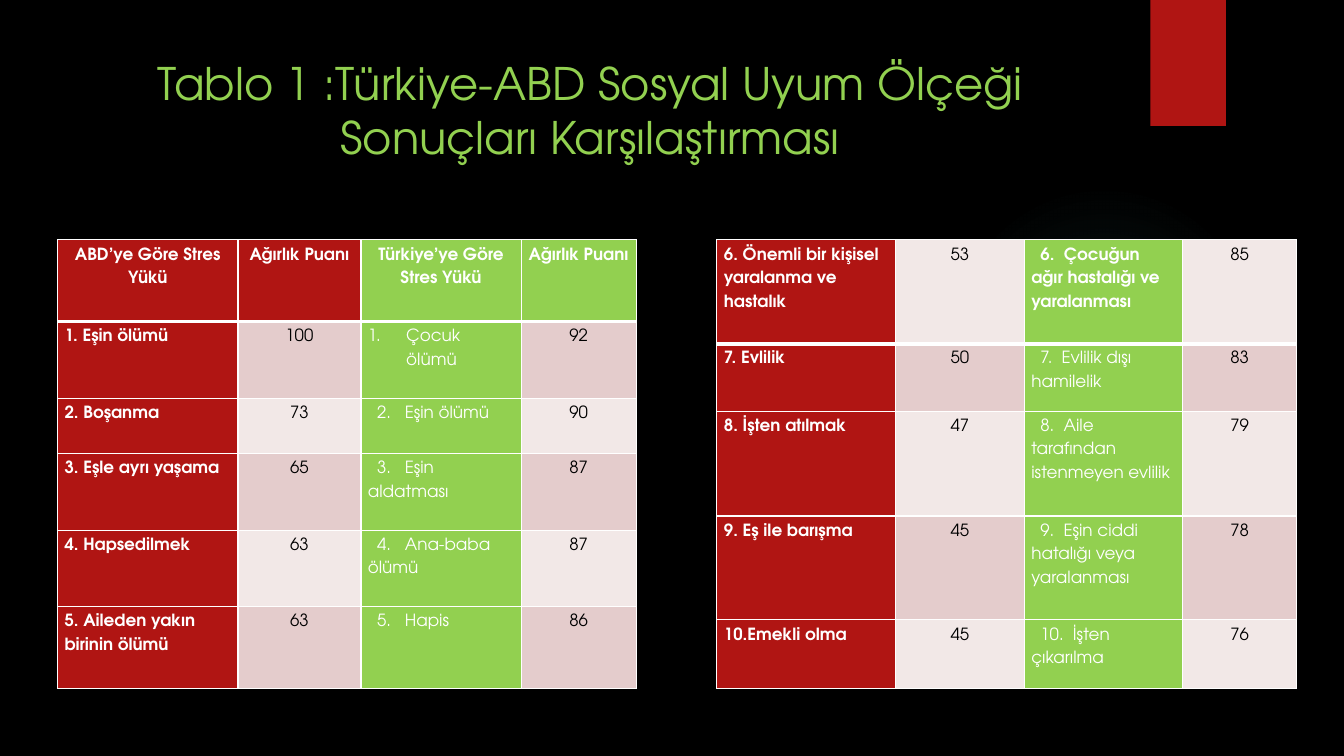
from dataclasses import dataclass

from lxml.etree import SubElement
from pptx import Presentation
from pptx.dml.color import RGBColor
from pptx.enum.shapes import MSO_SHAPE
from pptx.enum.text import MSO_ANCHOR, PP_ALIGN
from pptx.oxml import parse_xml
from pptx.oxml.ns import nsdecls, qn
from pptx.slide import Slide
from pptx.table import _Cell
from pptx.text.text import _Paragraph, _Run
from pptx.util import Pt

EMU_PER_PX = 9144  # 100 px to the inch
FONT = "TeX Gyre Adventor"
BLACK, WHITE, RED, GREEN, TEAL = "000000", "FFFFFF", "B01513", "92D050", "50B9C1"
BANDS = ("F2E8E7", "E4CCCC")


@dataclass(frozen=True)
class ScoreRow:
    height: int
    usa_event: str
    usa_score: str
    turkey_event: str
    turkey_score: str


@dataclass(frozen=True)
class ScoreTable:
    left: int
    widths: tuple[int, ...]
    number_gap: int  # extra width after a number, in hundredths of a point
    has_header: bool
    rows: tuple[ScoreRow, ...]


TABLES = (
    ScoreTable(57, (179, 122, 159, 114), 660, True, (
        ScoreRow(81, "ABD’ye Göre Stres Yükü", "Ağırlık Puanı",
                 "Türkiye’ye Göre Stres Yükü", "Ağırlık Puanı"),
        ScoreRow(76, "1. Eşin ölümü", "100", "Çocuk ölümü", "92"),
        ScoreRow(55, "2. Boşanma", "73", "2. Eşin ölümü", "90"),
        ScoreRow(76, "3. Eşle ayrı yaşama", "65", "3. Eşin aldatması", "87"),
        ScoreRow(76, "4. Hapsedilmek", "63", "4. Ana-baba ölümü", "87"),
        ScoreRow(81, "5. Aileden yakın birinin ölümü", "63", "5. Hapis", "86"),
    )),
    ScoreTable(711, (177, 128, 157, 113), 330, False, (
        ScoreRow(103, "6. Önemli bir kişisel yaralanma ve hastalık", "53",
                 "6. Çocuğun ağır hastalığı ve yaralanması", "85"),
        ScoreRow(67, "7. Evlilik", "50", "7. Evlilik dışı hamilelik", "83"),
        ScoreRow(104, "8. İşten atılmak", "47",
                 "8. Aile tarafından istenmeyen evlilik", "79"),
        ScoreRow(103, "9. Eş ile barışma", "45",
                 "9. Eşin ciddi hatalığı veya yaralanması", "78"),
        ScoreRow(68, "10.Emekli olma", "45", "10. İşten çıkarılma", "76"),
    )),
)


def px(length: int) -> int:
    return length * EMU_PER_PX


def rgb(color: str) -> RGBColor:
    return RGBColor.from_string(color)


def add_span(para: _Paragraph, text: str, size: int, color: str, bold: bool = False) -> _Run:
    span = para.add_run()
    span.text = text
    span.font.name = FONT
    span.font.size = Pt(size)
    span.font.bold = bold
    span.font.color.rgb = rgb(color)
    return span


def add_glow(page: Slide) -> None:
    """Faint teal disc that fades out towards its rim."""
    glow = page.shapes.add_shape(MSO_SHAPE.OVAL, px(941), px(183), px(308), px(308))
    glow.shadow.inherit = False
    glow.line.fill.background()
    stops = "".join(
        f'<a:gs pos="{place * 1000}"><a:srgbClr val="{TEAL}">'
        f'<a:alpha val="{alpha * 1000}"/></a:srgbClr></a:gs>'
        for place, alpha in ((0, 7), (36, 6), (69, 0))
    )
    gradient = parse_xml(
        f'<a:gradFill {nsdecls("a")}><a:gsLst>{stops}</a:gsLst><a:path path="circle">'
        '<a:fillToRect l="50000" t="50000" r="50000" b="50000"/></a:path></a:gradFill>'
    )
    glow.element.spPr.find(qn("a:prstGeom")).addnext(gradient)


def add_ribbon(page: Slide) -> None:
    ribbon = page.shapes.add_shape(MSO_SHAPE.RECTANGLE, px(1141), 0, px(75), px(125))
    ribbon.shadow.inherit = False
    ribbon.fill.solid()
    ribbon.fill.fore_color.rgb = rgb(RED)
    ribbon.line.fill.background()


def set_title(page: Slide, text: str) -> None:
    title = page.shapes.title
    title.left, title.top, title.width, title.height = px(71), px(50), px(1029), px(153)
    title.text_frame.word_wrap = True
    title.text_frame.vertical_anchor = MSO_ANCHOR.TOP
    para = title.text_frame.paragraphs[0]
    para.alignment = PP_ALIGN.CENTER
    add_span(para, text, 32, GREEN)


def set_borders(cell: _Cell, top: int, bottom: int) -> None:
    properties = cell._tc.get_or_add_tcPr()
    edges = (("L", 1), ("R", 1), ("T", top), ("B", bottom))
    for index, (side, weight) in enumerate(edges):
        properties.insert(index, parse_xml(
            f'<a:ln{side} {nsdecls("a")} w="{Pt(weight)}"><a:solidFill>'
            f'<a:srgbClr val="{WHITE}"/></a:solidFill></a:ln{side}>'
        ))


def add_numbered_event(para: _Paragraph, text: str, gap: int, bold: bool) -> None:
    """Indent a typed number and widen the space after it, or number automatically."""
    properties = para._p.get_or_add_pPr()
    if text[0].isdigit():
        properties.set("marL", "0")
        properties.set("indent", str(px(9)))
        number, space, event = text.partition(" ")
        add_span(para, number, 12, WHITE, bold)
        spacer = add_span(para, space, 12, WHITE, bold)
        spacer.font._element.set("spc", str(gap))
        add_span(para, event, 12, WHITE, bold)
    else:
        properties.set("marL", str(px(38)))
        properties.set("indent", str(-px(38)))
        SubElement(properties, qn("a:buFont"), typeface="+mj-lt")
        SubElement(properties, qn("a:buAutoNum"), type="arabicPeriod")
        add_span(para, text, 12, WHITE, bold)


def fill_cell(cell: _Cell, text: str, row: int, column: int, table: ScoreTable) -> None:
    is_header = table.has_header and row == 0
    is_score = column % 2 == 1 and not is_header
    country = RED if column < 2 else GREEN
    cell.margin_left = cell.margin_right = px(7)
    cell.margin_top = cell.margin_bottom = 0
    cell.vertical_anchor = MSO_ANCHOR.TOP
    cell.fill.solid()
    cell.fill.fore_color.rgb = rgb(BANDS[row % 2] if is_score else country)
    set_borders(cell, 3 if row == 1 else 1, 3 if row == 0 else 1)
    para = cell.text_frame.paragraphs[0]
    bold = is_header or column == 0 or (row == 0 and column == 2)
    if column == 2 and not is_header:
        add_numbered_event(para, text, table.number_gap, bold)
    else:
        add_span(para, text, 12, BLACK if is_score else WHITE, bold)
    para.alignment = PP_ALIGN.CENTER if is_header or is_score else PP_ALIGN.LEFT
    para.line_spacing = 1.5


def add_score_table(page: Slide, table: ScoreTable) -> None:
    height = sum(row.height for row in table.rows)
    grid = page.shapes.add_table(
        len(table.rows), len(table.widths),
        px(table.left), px(238), px(sum(table.widths)), px(height),
    ).table
    for column, width in enumerate(table.widths):
        grid.columns[column].width = px(width)
    for index, row in enumerate(table.rows):
        grid.rows[index].height = px(row.height)
        texts = (row.usa_event, row.usa_score, row.turkey_event, row.turkey_score)
        for column, text in enumerate(texts):
            fill_cell(grid.cell(index, column), text, index, column, table)


def main() -> None:
    deck = Presentation()
    deck.slide_width, deck.slide_height = px(1333), px(750)
    page = deck.slides.add_slide(deck.slide_layouts[5])
    page.background.fill.solid()
    page.background.fill.fore_color.rgb = rgb(BLACK)
    add_glow(page)
    add_ribbon(page)
    set_title(page, "Tablo 1 :Türkiye-ABD Sosyal Uyum Ölçeği Sonuçları Karşılaştırması")
    for table in TABLES:
        add_score_table(page, table)
    deck.save("out.pptx")


if __name__ == "__main__":
    main()
